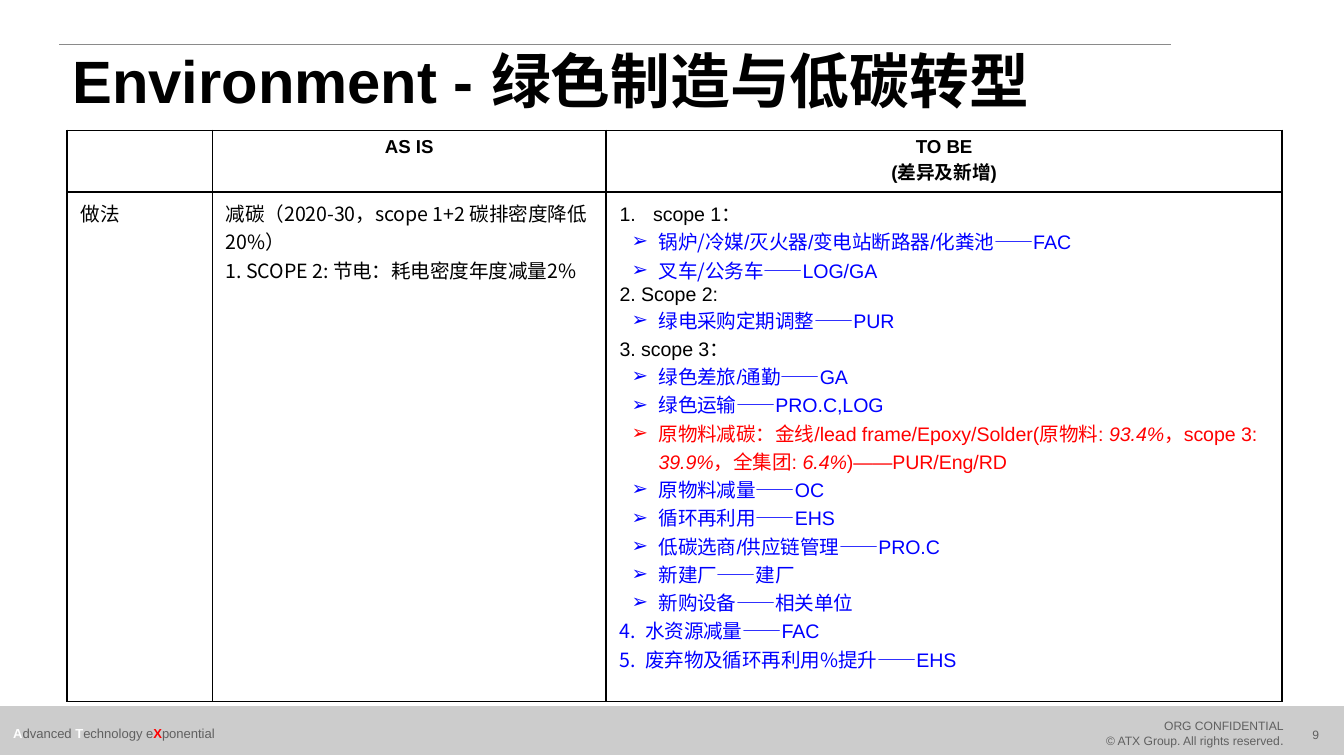
from pptx import Presentation
from pptx.dml.color import RGBColor
from pptx.enum.shapes import MSO_CONNECTOR, MSO_SHAPE
from pptx.enum.text import MSO_ANCHOR, PP_ALIGN
from pptx.oxml.ns import qn
from pptx.util import Inches, Pt
from lxml.etree import SubElement

LATIN, CJK = "Arial", "Noto Sans CJK SC"
BLACK, WHITE, GRAY = "000000", "FFFFFF", "606060"
BLUE, RED = "0000FF", "FF0000"


def color(code):
    return RGBColor.from_string(code)


def add_run(para, text, size, code=BLACK, bold=False, italic=False, face=LATIN):
    run = para.add_run()
    run.text = text
    font = run.font
    font.size, font.bold, font.italic, font.name = Pt(size), bold, italic, face
    font.color.rgb = color(code)
    SubElement(run._r.get_or_add_rPr(), qn("a:ea"), typeface=CJK)


def next_para(frame, first):
    return frame.paragraphs[0] if first else frame.add_paragraph()


def hang(para, left, indent):
    props = para._p.get_or_add_pPr()
    props.set("marL", str(Inches(left)))
    props.set("indent", str(Inches(indent)))
    return props


def add_text(slide, box, lines, align=PP_ALIGN.LEFT):
    """Place a text box; each line is a list of add_run arguments."""
    frame = slide.shapes.add_textbox(*map(Inches, box)).text_frame
    frame.word_wrap = True
    frame.vertical_anchor = MSO_ANCHOR.MIDDLE
    for i, line in enumerate(lines):
        para = next_para(frame, i == 0)
        para.alignment = align
        for args in line:
            add_run(para, *args)
    return frame


def add_header(slide, left, top, width):
    # Thin rule above the title
    rule = slide.shapes.add_connector(
        MSO_CONNECTOR.STRAIGHT, Inches(left), Inches(top),
        Inches(left + 8.27), Inches(top))
    rule.line.color.rgb = color("8A8A8A")
    rule.line.width = Pt(0.5)
    SubElement(rule._element.spPr, qn("a:effectLst"))
    # Title
    title = add_text(slide, (left, top + 0.02, width, 0.55),
                     [[("Environment - 绿色制造与低碳转型", 32, BLACK, True)]])
    title.paragraphs[0].line_spacing = 0.9


def add_footer(slide, left, top, width, height):
    # Band
    band = slide.shapes.add_shape(
        MSO_SHAPE.RECTANGLE, *map(Inches, (left, top, width, height)))
    band.shadow.inherit = False
    band.fill.solid()
    band.fill.fore_color.rgb = color("CCCCCC")
    band.line.color.rgb = color("CCCCCC")
    band.line.width = Pt(1)
    # Motto, notice and page number
    motto = [("A", 7, WHITE, True), ("dvanced ", 7, GRAY),
             ("T", 7, WHITE, True), ("echnology e", 7, GRAY),
             ("X", 7, RED, True), ("ponential", 7, GRAY)]
    notice = [[("ORG CONFIDENTIAL", 6.5, GRAY)],
              [("© ATX Group. All rights reserved", 6.5, GRAY), (".", 7, GRAY)]]
    add_text(slide, (left, top + 0.04, 1.91, 0.31), [motto])
    add_text(slide, (left + 7.97, top + 0.04, 1.68, 0.31), notice, PP_ALIGN.RIGHT)
    add_text(slide, (left + 9.51, top + 0.06, 0.56, 0.29),
             [[("9", 6.5, GRAY)]], PP_ALIGN.CENTER)


def style_cell(cell):
    cell.fill.background()
    props = cell._tc.get_or_add_tcPr()
    for i, side in enumerate(("lnL", "lnR", "lnT", "lnB")):
        edge = props.makeelement(qn("a:" + side), {"w": str(Pt(1))})
        fill = SubElement(edge, qn("a:solidFill"))
        SubElement(fill, qn("a:srgbClr"), val=BLACK)
        props.insert(i, edge)


def fill_plan(frame):
    """Write the TO BE list: (kind, colour, runs), a run being (text, face, italic)."""
    def point(text, code=BLUE):
        return "point", code, [(text,)]

    def head(text):
        return "head", BLACK, [(text,)]

    def step(text, unit):
        return "step", BLUE, [(text, CJK), (unit,)]

    plan = [
        ("auto", BLACK, [("scope 1",), ("：", CJK)]),
        ("point", BLUE, [("锅炉/", CJK), ("冷媒/灭火器/变电站断路器/化粪池——FAC",)]),
        ("point", BLUE, [("叉车/公务车", CJK), ("——LOG/GA",)]),
        head("2. Scope 2:"),
        point("绿电采购定期调整——PUR"),
        head("3. scope 3："),
        point("绿色差旅/通勤——GA"),
        point("绿色运输——PRO.C,LOG"),
        ("point", RED, [
            ("原物料减碳：金线/lead frame/Epoxy/Solder(原物料: ",),
            ("93.4%", LATIN, True), ("，scope 3: ",),
            ("39.9%", LATIN, True), ("，全集团: ",),
            ("6.4%", LATIN, True), (")——PUR/Eng/RD",)]),
        point("原物料减量——OC"),
        point("循环再利用——EHS"),
        point("低碳选商/供应链管理——PRO.C"),
        point("新建厂——建厂"),
        point("新购设备——相关单位"),
        step("4.\t水资源减量", "——FAC"),
        step("5.\t废弃物及循环再利用%提升", "——EHS"),
    ]
    for i, (kind, code, runs) in enumerate(plan):
        para = next_para(frame, i == 0)
        if kind == "auto":
            SubElement(hang(para, 0.25, -0.25), qn("a:buAutoNum"), type="arabicPeriod")
        elif kind == "point":
            props = hang(para, 0.29, -0.2)
            SubElement(props, qn("a:buFont"), typeface=LATIN)
            SubElement(props, qn("a:buChar"), char="➢")
        elif kind == "step":
            tabs = SubElement(hang(para, 0.19, -0.19), qn("a:tabLst"))
            SubElement(tabs, qn("a:tab"), pos=str(Inches(0.19)), algn="l")
        for text, face, italic in (run + (LATIN, False)[len(run) - 1:] for run in runs):
            add_run(para, text, 10.5, code, False, italic, face)


def add_grid(slide, left, top, cols, rows):
    box = map(Inches, (left, top, sum(cols), sum(rows)))
    table = slide.shapes.add_table(len(rows), len(cols), *box).table
    table.first_row = table.horz_banding = False
    for col, width in zip(table.columns, cols):
        col.width = Inches(width)
    for row, height in zip(table.rows, rows):
        row.height = Inches(height)
    for cell in table.iter_cells():
        style_cell(cell)

    # Column heads
    for c, lines in ((1, ["AS IS"]), (2, ["TO BE", "(差异及新增)"])):
        frame = table.cell(0, c).text_frame
        for i, line in enumerate(lines):
            para = next_para(frame, i == 0)
            para.alignment = PP_ALIGN.CENTER
            add_run(para, line, 10, bold=True)

    # Practice row
    add_run(table.cell(1, 0).text_frame.paragraphs[0], "做法", 10.5)
    frame = table.cell(1, 1).text_frame
    for i, line in enumerate(("减碳（2020-30，scope 1+2 碳排密度降低20%）",
                              "1. SCOPE 2: 节电：耗电密度年度减量2%")):
        add_run(next_para(frame, i == 0), line, 10.5, face=CJK)
    fill_plan(table.cell(1, 2).text_frame)


def main():
    deck = Presentation()
    # Widescreen, 16 to 9
    deck.slide_width, deck.slide_height = Inches(10), Inches(10 * 9 / 16)
    slide = deck.slides.add_slide(deck.slide_layouts[6])
    add_footer(slide, 0, 5.26, 10, 0.35)
    add_header(slide, 0.44, 0.33, 8.62)
    add_grid(slide, 0.5, 0.97, (1.08, 2.93, 5.03), (0.46, 3.79))
    deck.save("out.pptx")


if __name__ == "__main__":
    main()
